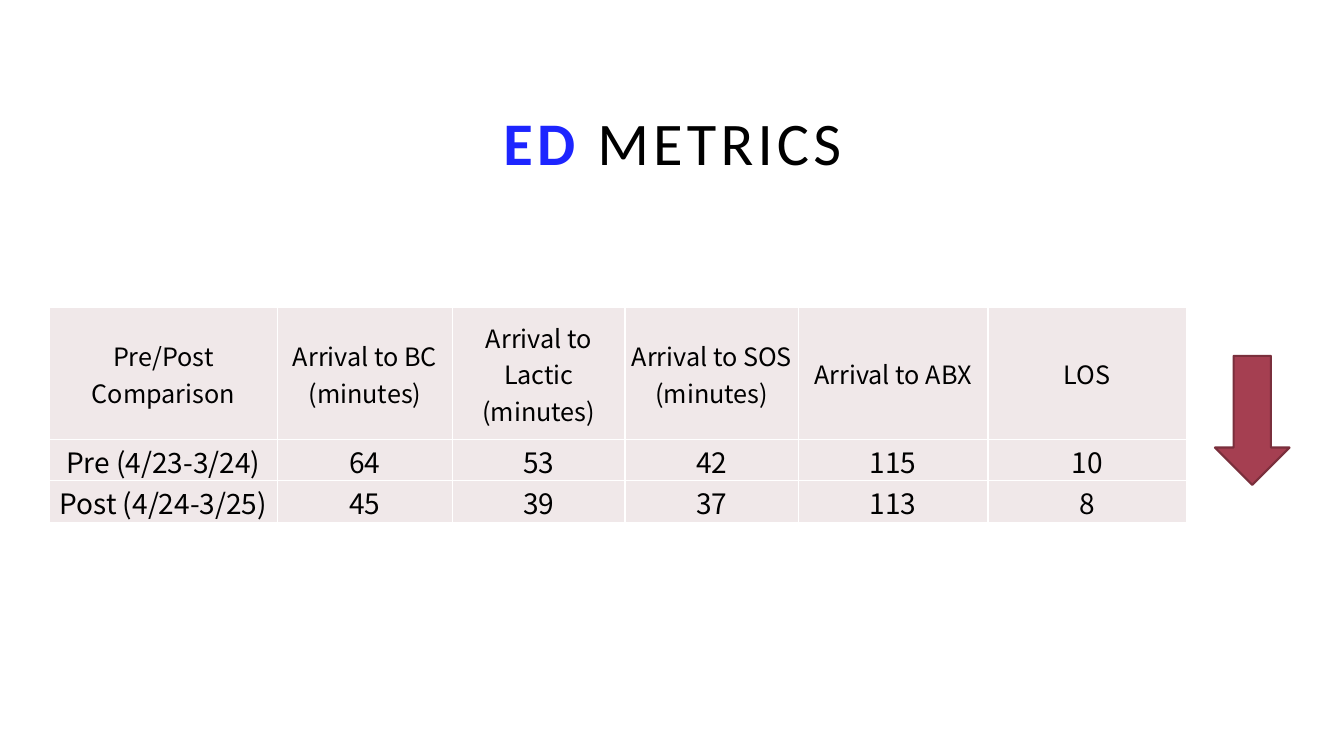
from pptx import Presentation
from pptx.dml.color import RGBColor
from pptx.enum.shapes import MSO_SHAPE
from pptx.enum.text import MSO_ANCHOR, PP_ALIGN
from pptx.oxml import parse_xml
from pptx.oxml.ns import nsdecls
from pptx.util import Inches, Pt

BLACK = RGBColor(0x00, 0x00, 0x00)
BLUE = RGBColor(0x1D, 0x25, 0xFF)
WHITE = RGBColor(0xFF, 0xFF, 0xFF)
BLUSH = RGBColor(0xF0, 0xE8, 0xE9)
CRIMSON = RGBColor(0xA5, 0x3F, 0x51)
MAROON = RGBColor(0x7A, 0x2F, 0x3C)

COL_WIDTHS = [2.26, 1.74, 1.71, 1.72, 1.88, 1.97]
ROW_HEIGHTS = [1.31, 0.41, 0.41]
METRICS = [
    ["Pre/Post Comparison", "Arrival to BC\n(minutes)", "Arrival to Lactic\n(minutes)",
     "Arrival to SOS\n(minutes)", "Arrival to ABX", "LOS"],
    ["Pre (4/23-3/24)", "64", "53", "42", "115", "10"],
    ["Post (4/24-3/25)", "45", "39", "37", "113", "8"],
]


class MetricsSlide:
    """Draws the elements of one slide in a shared style."""

    title_font = "Calibri"
    table_font = "Noto Sans CJK KR"

    def __init__(self, prs):
        self.s = prs.slides.add_slide(prs.slide_layouts[6])

    def run(self, p, text, font, size, color, bold=False):
        r = p.add_run()
        r.text = text
        r.font.name = font
        r.font.size = Pt(size)
        r.font.bold = bold
        r.font.color.rgb = color
        return r

    def title(self, x, y, w, h, parts):
        tf = self.s.shapes.add_textbox(Inches(x), Inches(y), Inches(w), Inches(h)).text_frame
        tf.word_wrap = True
        tf.vertical_anchor = MSO_ANCHOR.MIDDLE
        tf.margin_top = Inches(0.7)
        p = tf.paragraphs[0]
        p.alignment = PP_ALIGN.CENTER
        p.line_spacing = 0.9
        for text, color, bold in parts:
            r = self.run(p, text, self.title_font, 43.2, color, bold)
            r.font._element.set("spc", "300")

    def table(self, x, y, rows):
        frame = self.s.shapes.add_table(
            len(rows), len(COL_WIDTHS), Inches(x), Inches(y),
            Inches(sum(COL_WIDTHS)), Inches(sum(ROW_HEIGHTS)))
        table = frame.table
        for column, width in zip(table.columns, COL_WIDTHS):
            column.width = Inches(width)
        for i, (row, height) in enumerate(zip(rows, ROW_HEIGHTS)):
            table.rows[i].height = Inches(height)
            for j, text in enumerate(row):
                self.cell(table.cell(i, j), text, 20 if i else 18)

    def cell(self, cell, text, size):
        cell.fill.solid()
        cell.fill.fore_color.rgb = BLUSH
        cell.vertical_anchor = MSO_ANCHOR.MIDDLE
        cell.margin_left = cell.margin_right = cell.margin_top = Inches(0.01)
        cell.margin_bottom = 0
        p = cell.text_frame.paragraphs[0]
        p.alignment = PP_ALIGN.CENTER
        for i, line in enumerate(text.split("\n")):
            if i:
                p.add_line_break()
            self.run(p, line, self.table_font, size, BLACK)
        tc_pr = cell._tc.get_or_add_tcPr()
        for i, side in enumerate("LRTB"):
            tc_pr.insert(i, parse_xml(
                f'<a:ln{side} {nsdecls("a")} w="{Pt(1)}"><a:solidFill>'
                f'<a:srgbClr val="{WHITE}"/></a:solidFill></a:ln{side}>'))

    def down_arrow(self, x, y, w, h):
        sp = self.s.shapes.add_shape(
            MSO_SHAPE.DOWN_ARROW, Inches(x), Inches(y), Inches(w), Inches(h))
        sp.shadow.inherit = False
        sp.fill.solid()
        sp.fill.fore_color.rgb = CRIMSON
        sp.line.color.rgb = MAROON
        sp.line.width = Pt(1.5)


def main():
    prs = Presentation()
    prs.slide_width = Inches(13.33)
    prs.slide_height = Inches(7.5)
    slide = MetricsSlide(prs)
    slide.title(0.92, 0.4, 11.5, 1.45, [("ED ", BLUE, True), ("METRICS", BLACK, False)])
    slide.table(0.49, 3.05, METRICS)
    slide.down_arrow(12.05, 3.53, 0.74, 1.28)
    prs.save("out.pptx")


if __name__ == "__main__":
    main()
